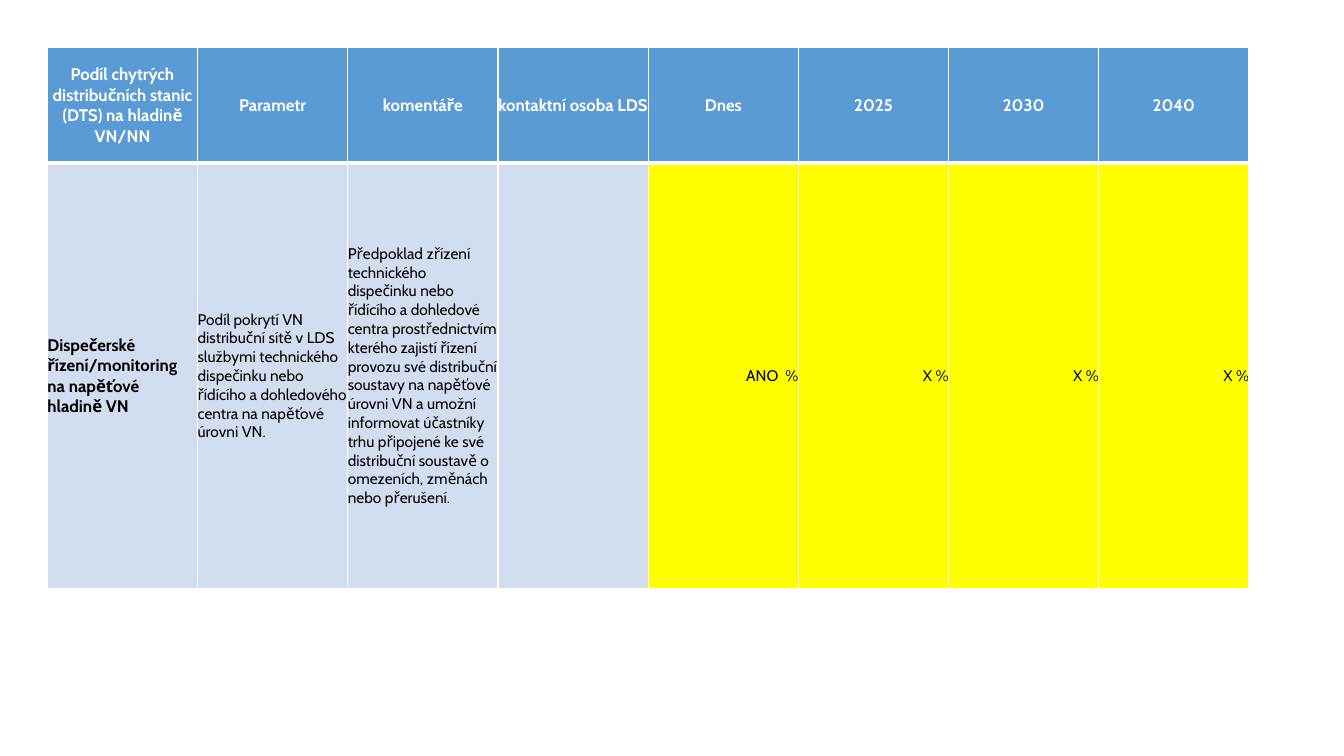
"""Build a slide with a table on the share of smart distribution stations."""
from dataclasses import dataclass

from lxml.etree import SubElement
from pptx import Presentation
from pptx.dml.color import RGBColor
from pptx.enum.text import MSO_ANCHOR as Anchor, PP_ALIGN as Align
from pptx.oxml.ns import qn
from pptx.table import _Cell as Cell
from pptx.util import Inches, Pt

WHITE = RGBColor(0xFF, 0xFF, 0xFF)
BLACK = RGBColor(0x00, 0x00, 0x00)
BLUE = RGBColor(0x5B, 0x9B, 0xD5)
PALE_BLUE = RGBColor(0xD2, 0xDE, 0xEF)
YELLOW = RGBColor(0xFF, 0xFF, 0x00)

FONT = "Cabin"
TABLE_LEFT = TABLE_TOP = 0.47
COLUMN_WIDTH = 1.49
ROW_HEIGHTS = (1.15, 4.22)


@dataclass(frozen=True)
class CellStyle:
    fill: RGBColor
    color: RGBColor
    size: int
    bold: bool
    align: Align
    top_border: float = 3
    bottom_border: float = 1


HEADER = CellStyle(BLUE, WHITE, 12, True, Align.CENTER, top_border=1, bottom_border=3)
TOPIC = CellStyle(PALE_BLUE, BLACK, 12, True, Align.LEFT)
DETAIL = CellStyle(PALE_BLUE, BLACK, 11, False, Align.LEFT)
VALUE = CellStyle(YELLOW, BLACK, 11, False, Align.RIGHT)

HEADINGS = (
    "Podíl chytrých distribučních stanic (DTS) na hladině VN/NN",
    "Parametr",
    "komentáře",
    "kontaktní osoba LDS",
    "Dnes",
    "2025",
    "2030",
    "2040",
)
BODY = (
    ("Dispečerské řízení/monitoring na napěťové hladině VN", TOPIC),
    (
        "Podíl pokrytí VN distribuční sítě v LDS službymi technického dispečinku "
        "nebo řídícího a dohledového centra na napěťové úrovni VN.",
        DETAIL,
    ),
    (
        "Předpoklad zřízení technického dispečinku nebo řídícího a dohledové centra "
        "prostřednictvím kterého zajistí řízení provozu své distribuční soustavy "
        "na napěťové úrovni VN a umožní informovat účastníky trhu připojené ke své "
        "distribuční soustavě o omezeních, změnách nebo přerušení.",
        DETAIL,
    ),
    ("", DETAIL),
    ("ANO  %", VALUE),
    ("X %", VALUE),
    ("X %", VALUE),
    ("X %", VALUE),
)
ROWS = (tuple((heading, HEADER) for heading in HEADINGS), BODY)


def set_borders(cell: Cell, style: CellStyle) -> None:
    properties = cell._tc.get_or_add_tcPr()
    widths = {"lnL": 1, "lnR": 1, "lnT": style.top_border, "lnB": style.bottom_border}
    for tag, width in widths.items():
        line = SubElement(properties, qn(f"a:{tag}"), w=str(Pt(width)))
        solid_fill = SubElement(line, qn("a:solidFill"))
        SubElement(solid_fill, qn("a:srgbClr"), val=str(WHITE))


def fill_cell(cell: Cell, text: str, style: CellStyle) -> None:
    set_borders(cell, style)
    cell.fill.solid()
    cell.fill.fore_color.rgb = style.fill
    cell.vertical_anchor = Anchor.MIDDLE
    cell.margin_left = cell.margin_right = cell.margin_top = cell.margin_bottom = 0
    if not text:
        return
    paragraph = cell.text_frame.paragraphs[0]
    paragraph.alignment = style.align
    run = paragraph.add_run()
    run.text = text
    run.font.name = FONT
    run.font.size = Pt(style.size)
    run.font.bold = style.bold
    run.font.color.rgb = style.color


def main() -> None:
    presentation = Presentation()
    presentation.slide_width = Inches(13.33)
    presentation.slide_height = Inches(7.5)
    slide = presentation.slides.add_slide(presentation.slide_layouts[6])
    table = slide.shapes.add_table(
        len(ROWS),
        len(HEADINGS),
        Inches(TABLE_LEFT),
        Inches(TABLE_TOP),
        Inches(COLUMN_WIDTH * len(HEADINGS)),
        Inches(sum(ROW_HEIGHTS)),
    ).table
    for column in table.columns:
        column.width = Inches(COLUMN_WIDTH)
    for row, height, contents in zip(table.rows, ROW_HEIGHTS, ROWS):
        row.height = Inches(height)
        for cell, (text, style) in zip(row.cells, contents):
            fill_cell(cell, text, style)
    presentation.save("out.pptx")


if __name__ == "__main__":
    main()
